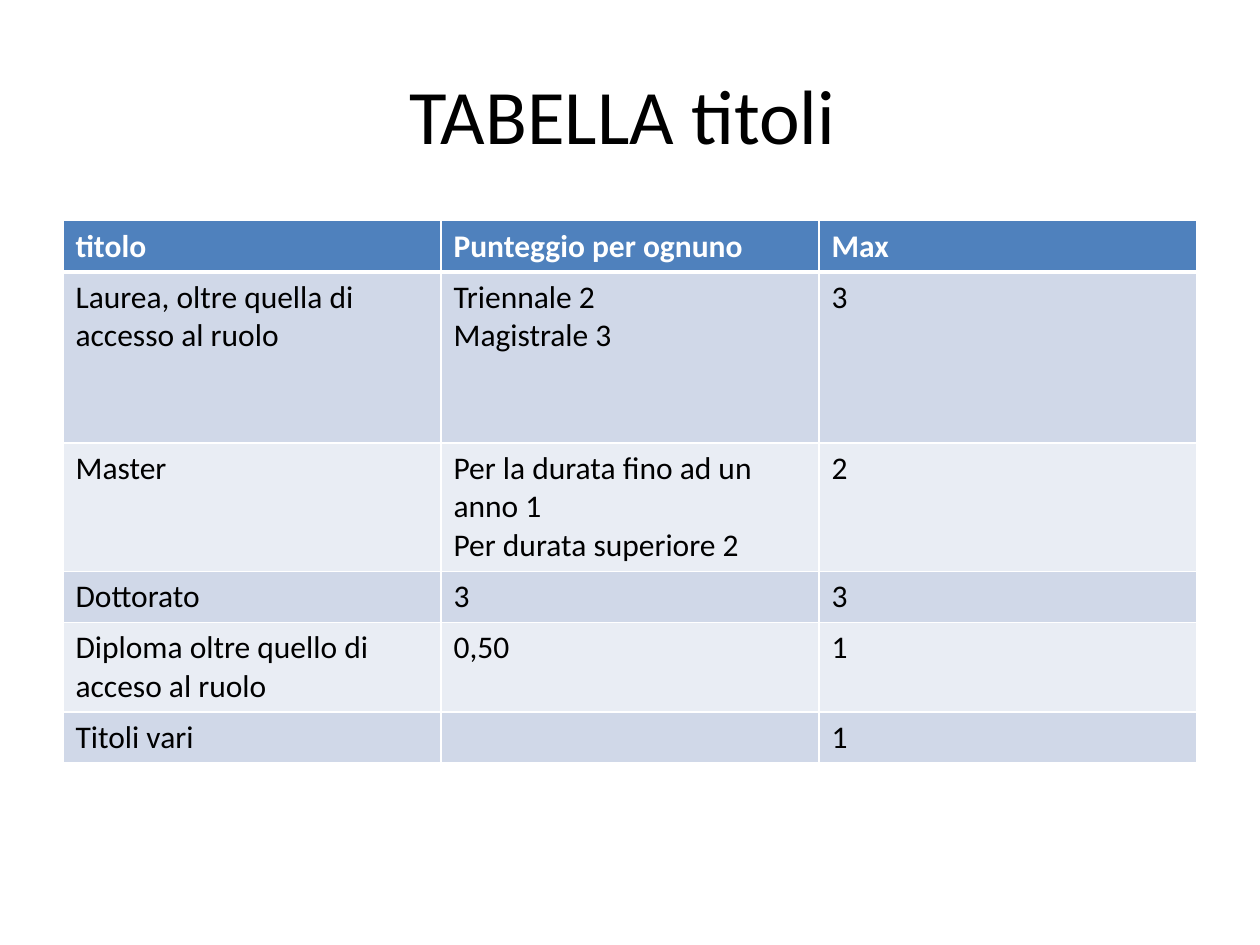
from lxml import etree
from pptx import Presentation
from pptx.dml.color import RGBColor
from pptx.enum.text import MSO_ANCHOR, PP_ALIGN
from pptx.oxml.ns import qn
from pptx.util import Cm, Pt

CENTER, LEFT = PP_ALIGN.CENTER, PP_ALIGN.LEFT
MIDDLE = MSO_ANCHOR.MIDDLE

WHITE = RGBColor(0xFF, 0xFF, 0xFF)
BLACK = RGBColor(0, 0, 0)
HEADER = RGBColor(0x4F, 0x81, 0xBD)
BAND_DARK = RGBColor(0xD0, 0xD8, 0xE8)
BAND_LIGHT = RGBColor(0xE9, 0xED, 0xF4)

ROWS = [
    ["titolo", "Punteggio per ognuno", "Max"],
    ["Laurea, oltre quella di accesso al ruolo", "Triennale 2\nMagistrale 3", "3"],
    ["Master", "Per la durata fino ad un anno 1\nPer durata superiore 2", "2"],
    ["Dottorato", "3", "3"],
    ["Diploma oltre quello di acceso al ruolo", "0,50", "1"],
    ["Titoli vari", "", "1"],
]
ROW_HEIGHTS = [1.03, 3.45, 2.59, 1.03, 1.8, 1.03]


class SlideBuilder:
    font = "Calibri"
    title_size = Pt(44)
    cell_size = Pt(18)

    def __init__(self, slide):
        self.slide = slide

    def add_text(self, tf, text, size, color, bold=False, align=LEFT):
        for i, line in enumerate(text.split("\n")):
            p = tf.paragraphs[0] if i == 0 else tf.add_paragraph()
            p.alignment = align
            if not line:
                p.font.size = size
                continue
            r = p.add_run()
            r.text = line
            r.font.name = self.font
            r.font.size = size
            r.font.bold = bold
            r.font.color.rgb = color

    def title(self, text, left, top, width, height):
        sp = self.slide.shapes.add_textbox(Cm(left), Cm(top), Cm(width), Cm(height))
        tf = sp.text_frame
        tf.word_wrap = True
        tf.vertical_anchor = MIDDLE
        self.add_text(tf, text, self.title_size, BLACK, align=CENTER)

    def borders(self, cell, widths):
        tc_pr = cell._tc.get_or_add_tcPr()
        # Border lines come before the fill in the cell properties
        for i, (side, width) in enumerate(widths.items()):
            ln = etree.Element(qn("a:ln" + side), w=str(Pt(width)))
            fill = etree.SubElement(ln, qn("a:solidFill"))
            etree.SubElement(fill, qn("a:srgbClr"), val=str(WHITE))
            tc_pr.insert(i, ln)

    def table(self, rows, heights, left, top, width):
        shape = self.slide.shapes.add_table(
            len(rows), len(rows[0]), Cm(left), Cm(top), Cm(width), Cm(sum(heights)))
        table = shape.table
        for y, (texts, height) in enumerate(zip(rows, heights)):
            table.rows[y].height = Cm(height)
            head = y == 0
            band = HEADER if head else BAND_DARK if y % 2 else BAND_LIGHT
            sides = {"L": 1, "R": 1, "T": 3 if y == 1 else 1, "B": 3 if head else 1}
            for x, text in enumerate(texts):
                cell = table.cell(y, x)
                cell.fill.solid()
                cell.fill.fore_color.rgb = band
                self.borders(cell, sides)
                self.add_text(cell.text_frame, text, self.cell_size,
                              WHITE if head else BLACK, bold=head)


def main():
    prs = Presentation()
    prs.slide_width, prs.slide_height = Cm(25.4), Cm(19.05)
    s = SlideBuilder(prs.slides.add_slide(prs.slide_layouts[6]))

    # Title
    s.title("TABELLA titoli ", 1.3, 0.71, 22.86, 3.18)

    # Table of qualifications and scores
    s.table(ROWS, ROW_HEIGHTS, 1.27, 4.45, 22.86)

    prs.save("out.pptx")


if __name__ == "__main__":
    main()
